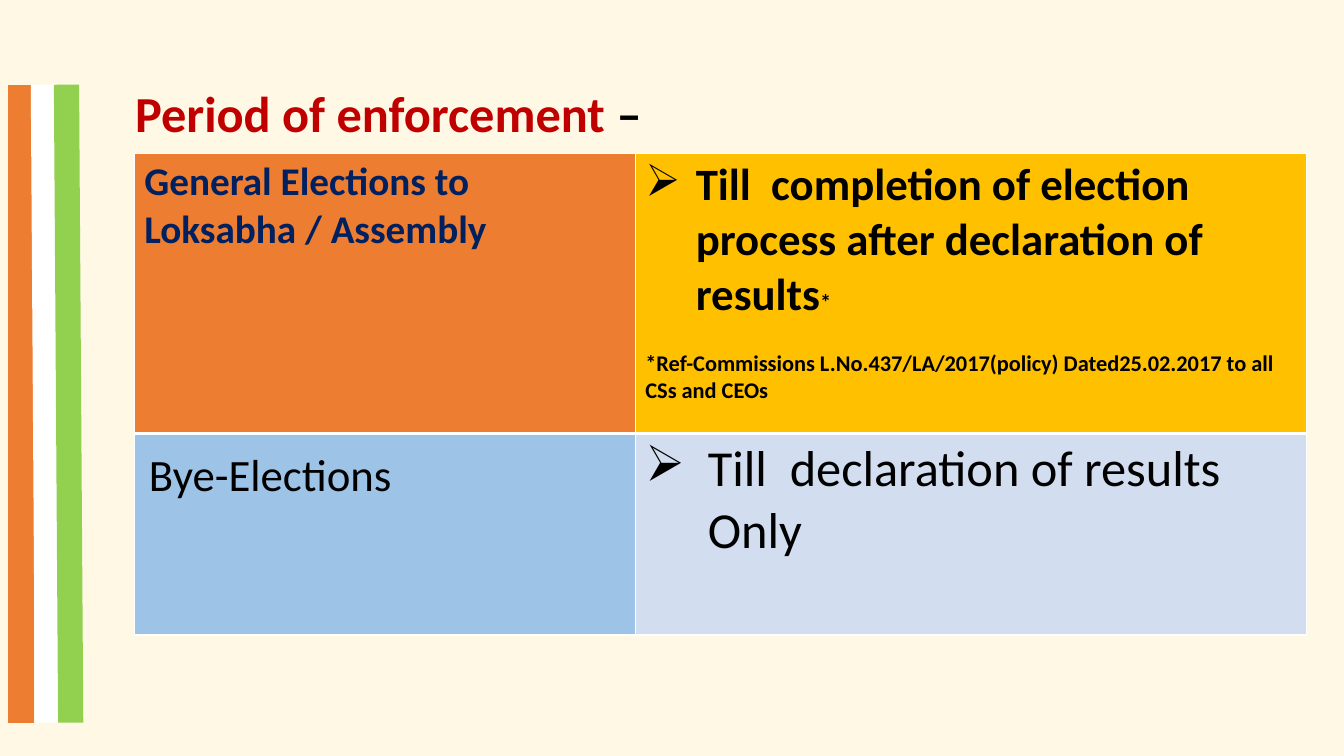
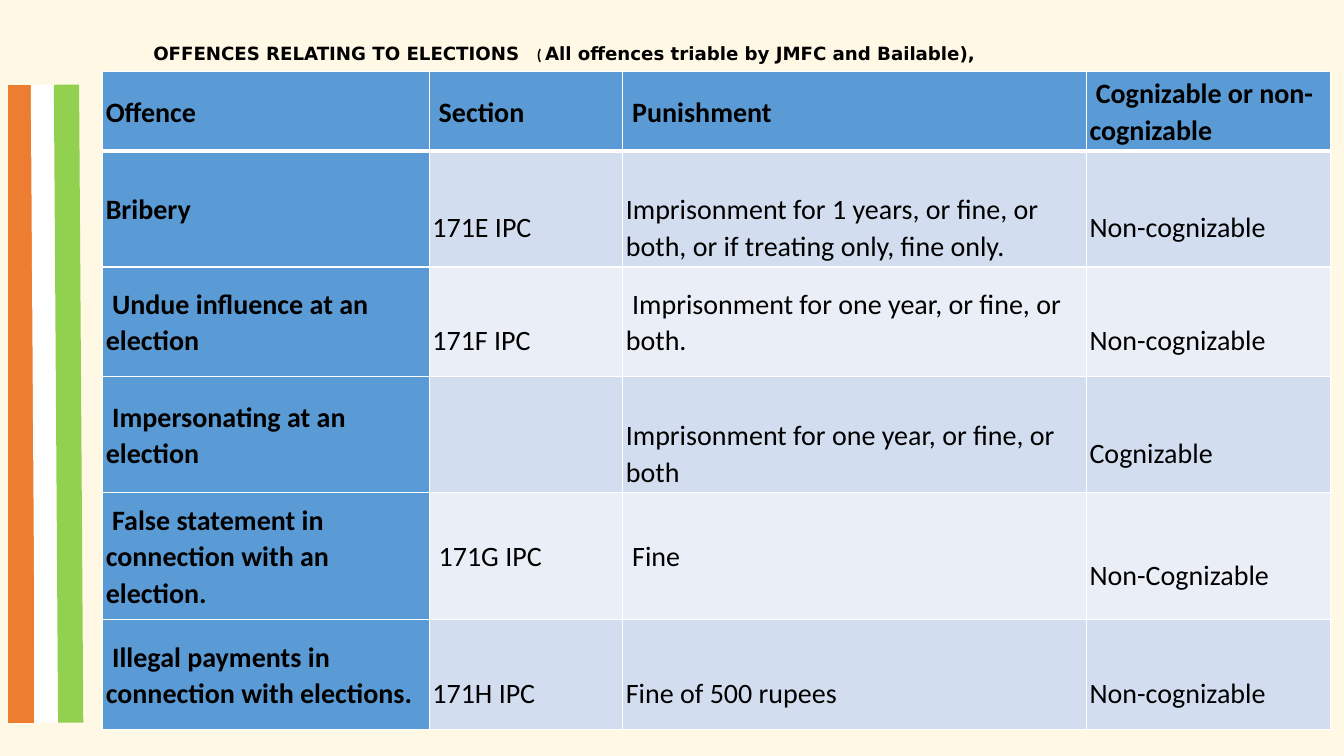
"""Build two slides on election rules: enforcement period and offences."""
from lxml import etree
from pptx import Presentation
from pptx.dml.color import RGBColor
from pptx.enum.shapes import MSO_CONNECTOR
from pptx.enum.text import MSO_ANCHOR
from pptx.oxml.ns import qn
from pptx.util import Pt

STRAIGHT = MSO_CONNECTOR.STRAIGHT
TOP, MIDDLE = MSO_ANCHOR.TOP, MSO_ANCHOR.MIDDLE

CREAM = RGBColor(0xFF, 0xF8, 0xE5)
WHITE = RGBColor(0xFF, 0xFF, 0xFF)
BLACK = RGBColor(0, 0, 0)
ORANGE = RGBColor(0xED, 0x7D, 0x31)
GREEN = RGBColor(0x92, 0xD0, 0x50)
RED = RGBColor(0xC0, 0, 0)
NAVY = RGBColor(0, 0x20, 0x60)
AMBER = RGBColor(0xFF, 0xC0, 0)
SKY = RGBColor(0x9D, 0xC3, 0xE6)
BLUE = RGBColor(0x5B, 0x9B, 0xD5)
PALE_BLUE = RGBColor(0xD2, 0xDE, 0xEF)
PALEST_BLUE = RGBColor(0xEA, 0xEF, 0xF7)

BODY_FONT, TITLE_FONT = "Calibri", "DejaVu Sans"

STRIPES = [(15, 15, ORANGE), (31, 34, WHITE), (47.5, 50.5, GREEN)]
STRIPE_TOP, STRIPE_BOTTOM, STRIPE_WIDTH = 60.5, 516.2, 18

PERIOD_TITLE = [
    ("Period of enforcement ", dict(size=36, bold=True, color=RED)),
    ("–", dict(size=36, bold=True)),
]
PERIOD_COLUMNS, PERIOD_ROWS = [357.8, 479.5], [200.2, 144]
PERIOD_CELLS = [
    [
        dict(fill=ORANGE, paragraphs=[
            ([("General Elections to Loksabha / Assembly",
               dict(size=28, bold=True, color=NAVY))], {})]),
        dict(fill=AMBER, paragraphs=[
            ([("Till  completion of election process after declaration of results",
               dict(size=32, bold=True)),
              ("*", dict(size=16, bold=True))], dict(hanging=36, bullet="➢")),
            ([("*Ref-Commissions L.No.437/LA/2017(policy) Dated25.02.2017 "
               "to all CSs and CEOs", dict(size=16, bold=True))], dict(before=19.5))]),
    ],
    [
        dict(fill=SKY, insets=(10.4, 11.2, 7.2, 3.6), paragraphs=[
            ([("Bye-Elections", dict(size=32))], {})]),
        dict(fill=PALE_BLUE, paragraphs=[
            ([("Till  declaration of results Only", dict(size=36))],
             dict(hanging=44.6, bullet="➢"))]),
    ],
]

OFFENCES_TITLE = [
    ("OFFENCES RELATING TO ELECTIONS\t", dict(size=13, bold=True, font=TITLE_FONT)),
    ("( ", dict(size=11, bold=True)),
    ("All offences triable by JMFC and Bailable),",
     dict(size=13, bold=True, font=TITLE_FONT)),
]
PLAIN, INDENTED, LOWERED = "plain", "indented", "lowered"
OFFENCE_COLUMNS = [233.3, 138.2, 331.2, 174.2]
OFFENCE_ROWS = [54.7, 81.4, 78.5, 81.4, 90.7, 78.5]
OFFENCES = [
    [("Offence", PLAIN), ("Section", INDENTED), ("Punishment", INDENTED),
     ("Cognizable or non-cognizable", INDENTED)],
    [("Bribery", PLAIN), ("171E IPC", LOWERED),
     ("Imprisonment for 1 years, or fine, or both, or if treating only, fine only.",
      LOWERED),
     ("Non-cognizable", LOWERED)],
    [("Undue influence at an election", INDENTED), ("171F IPC", LOWERED),
     ("Imprisonment for one year, or fine, or both.", INDENTED),
     ("Non-cognizable", LOWERED)],
    [("Impersonating at an election", INDENTED), ("", PLAIN),
     ("Imprisonment for one year, or fine, or both", LOWERED),
     ("Cognizable", LOWERED)],
    [("False statement in connection with an election.", INDENTED),
     ("171G IPC", INDENTED), ("Fine", INDENTED), ("Non-Cognizable", LOWERED)],
    [("Illegal payments in connection with elections.", INDENTED),
     ("171H IPC", LOWERED), ("Fine of 500 rupees", LOWERED),
     ("Non-cognizable", LOWERED)],
]
OFFENCE_SIZE, OFFENCE_SPACING, OFFENCE_INSET = 20, 1.07, 2.2
LOWERED_BY, INDENTED_BY = 26, 4.5


def write(paragraph, text, *, size, bold=False, color=BLACK, font=BODY_FONT):
    run = paragraph.add_run()
    run.text = text
    run.font.size = Pt(size)
    run.font.bold = bold
    run.font.name = font
    run.font.color.rgb = color


def lay_out(paragraph, hanging=0, bullet=None, first_indent=0, tab=None,
            before=None, spacing=None):
    properties = paragraph._p.get_or_add_pPr()
    if hanging or first_indent:
        properties.set("marL", str(Pt(hanging)))
        properties.set("indent", str(Pt(first_indent - hanging)))
    if bullet:
        etree.SubElement(properties, qn("a:buChar")).set("char", bullet)
    if tab:
        stops = etree.SubElement(properties, qn("a:tabLst"))
        stop = etree.SubElement(stops, qn("a:tab"))
        stop.set("pos", str(Pt(tab)))
        stop.set("algn", "l")
    if before:
        paragraph.space_before = Pt(before)
    if spacing:
        paragraph.line_spacing = spacing


def fill_frame(frame, paragraphs):
    for index, (runs, layout) in enumerate(paragraphs):
        paragraph = frame.add_paragraph() if index else frame.paragraphs[0]
        lay_out(paragraph, **layout)
        for text, style in runs:
            write(paragraph, text, **style)


def add_title(slide, runs, left, top, width, height, **layout):
    frame = slide.shapes.add_textbox(Pt(left), Pt(top), Pt(width), Pt(height)).text_frame
    frame.word_wrap = True
    frame.margin_left = frame.margin_top = frame.margin_right = frame.margin_bottom = 0
    fill_frame(frame, [(runs, layout)])


def add_borders(cell, bottom):
    properties = cell._tc.get_or_add_tcPr()
    for side, width in (("L", 1), ("R", 1), ("T", 1), ("B", bottom)):
        line = etree.SubElement(properties, qn(f"a:ln{side}"))
        line.set("w", str(Pt(width)))
        solid = etree.SubElement(line, qn("a:solidFill"))
        etree.SubElement(solid, qn("a:srgbClr")).set("val", str(WHITE))


def style_cell(cell, fill, paragraphs, bottom, insets=(7.2, 3.6, 7.2, 3.6), anchor=TOP):
    add_borders(cell, bottom)
    cell.fill.solid()
    cell.fill.fore_color.rgb = fill
    (cell.margin_left, cell.margin_top,
     cell.margin_right, cell.margin_bottom) = map(Pt, insets)
    cell.vertical_anchor = anchor
    fill_frame(cell.text_frame, paragraphs)


def add_grid(slide, left, top, columns, rows, cells):
    table = slide.shapes.add_table(
        len(rows), len(columns), Pt(left), Pt(top),
        Pt(sum(columns)), Pt(sum(rows))).table
    for column, width in zip(table.columns, columns):
        column.width = Pt(width)
    for row, height in zip(table.rows, rows):
        row.height = Pt(height)
    for r, row_cells in enumerate(cells):
        for c, content in enumerate(row_cells):
            style_cell(table.cell(r, c), bottom=1 if r else 3, **content)


def offence_cell(row, column, text, placement):
    heading = row == 0 or column == 0
    band = PALE_BLUE if row % 2 else PALEST_BLUE
    top = OFFENCE_INSET + (LOWERED_BY if placement == LOWERED else 0)
    layout = dict(spacing=OFFENCE_SPACING,
                  first_indent=INDENTED_BY if placement == INDENTED else 0)
    runs = [(text, dict(size=OFFENCE_SIZE, bold=heading))] if text else []
    return dict(fill=BLUE if heading else band, anchor=MIDDLE,
                insets=(OFFENCE_INSET, top, OFFENCE_INSET, OFFENCE_INSET),
                paragraphs=[(runs, layout)])


def add_striped_slide(deck):
    slide = deck.slides.add_slide(deck.slide_layouts[6])
    for top_x, bottom_x, color in STRIPES:
        stripe = slide.shapes.add_connector(
            STRAIGHT, Pt(top_x), Pt(STRIPE_TOP), Pt(bottom_x), Pt(STRIPE_BOTTOM))
        stripe.line.width = Pt(STRIPE_WIDTH)
        stripe.line.color.rgb = color
        etree.SubElement(stripe._element.spPr, qn("a:effectLst"))
    return slide


def main():
    deck = Presentation()
    deck.slide_width, deck.slide_height = Pt(960), Pt(540)
    background = deck.slide_master.background.fill
    background.solid()
    background.fore_color.rgb = CREAM

    period = add_striped_slide(deck)
    add_title(period, PERIOD_TITLE, 96.5, 58.4, 830, 44)
    add_grid(period, 96, 109.4, PERIOD_COLUMNS, PERIOD_ROWS, PERIOD_CELLS)

    offences = add_striped_slide(deck)
    cells = [[offence_cell(r, c, *entry) for c, entry in enumerate(row)]
             for r, row in enumerate(OFFENCES)]
    add_grid(offences, 73.4, 51.1, OFFENCE_COLUMNS, OFFENCE_ROWS, cells)
    add_title(offences, OFFENCES_TITLE, 109.5, 30, 810, 16, tab=274)

    deck.save("out.pptx")


if __name__ == "__main__":
    main()
